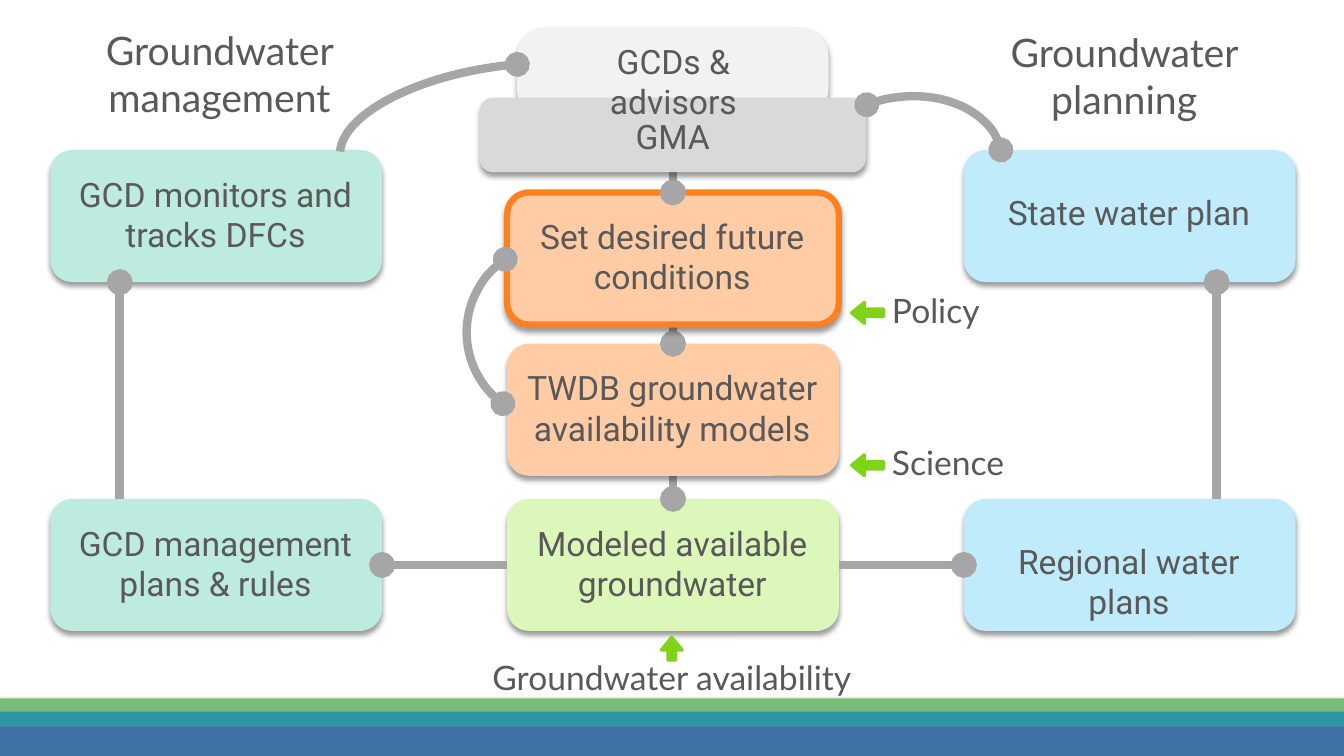
from dataclasses import dataclass

from lxml.etree import SubElement
from pptx import Presentation
from pptx.dml.color import RGBColor
from pptx.enum.shapes import MSO_CONNECTOR, MSO_SHAPE as SHAPE
from pptx.enum.text import MSO_AUTO_SIZE as AUTO_SIZE, PP_ALIGN as ALIGN
from pptx.oxml.ns import qn
from pptx.util import Cm, Pt


@dataclass(frozen=True)
class Theme:
    text: str = "595959"
    link: str = "A6A6A6"
    arrow: str = "81D31A"
    accent: str = "FF8021"
    management: str = "BEEBDF"
    planning: str = "BFEBFA"
    policy: str = "FFCCA6"
    available: str = "DCF7BA"
    advisors: str = "F2F2F2"
    gma: str = "D9D9D9"
    bands: tuple = ("7ABC77", "2F95A5", "3F72A2")
    box_font: str = "Roboto"
    label_font: str = "Lato"
    body: int = 24
    heading: int = 28


# Slide and card measures in centimetres
SLIDE_W, SLIDE_H = 33.87, 19.05
CARD_W, CARD_H = 8.36, 3.33
LEFT, MIDDLE, RIGHT = 1.27, 12.78, 24.29
TOP_ROW, DFC_ROW, MODEL_ROW, BOTTOM_ROW = 3.78, 4.85, 8.66, 12.57
CENTER_X = MIDDLE + CARD_W / 2
LINK_Y = BOTTOM_ROW + CARD_H / 2


class Diagram:
    def __init__(self, slide, theme):
        self.s = slide
        self.t = theme

    def shape(self, kind, box, fill=None, line=None, width=0, adj=()):
        sp = self.s.shapes.add_shape(kind, *map(Cm, box))
        sp.shadow.inherit = False
        for i, value in enumerate(adj):
            sp.adjustments[i] = value
        if fill:
            sp.fill.solid()
            sp.fill.fore_color.rgb = RGBColor.from_string(fill)
        else:
            sp.fill.background()
        if line:
            sp.line.color.rgb = RGBColor.from_string(line)
            sp.line.width = Pt(width)
        else:
            sp.line.fill.background()
        return sp

    def shadow(self, sp, blur=4, dist=3, alpha=40):
        effects = sp._element.spPr.find(qn("a:effectLst"))
        outer = SubElement(effects, qn("a:outerShdw"), blurRad=str(Pt(blur)),
                           dist=str(Pt(dist)), dir="5400000", rotWithShape="0")
        black = SubElement(outer, qn("a:srgbClr"), val="000000")
        SubElement(black, qn("a:alpha"), val=str(alpha * 1000))

    def box(self, box, fill, adj=(), line=None):
        sp = self.shape(SHAPE.ROUNDED_RECTANGLE, box, fill, line, 4.5, adj)
        self.shadow(sp)

    def text(self, text, box, font=None, size=None, align=ALIGN.CENTER):
        tf = self.s.shapes.add_textbox(*map(Cm, box)).text_frame
        tf.word_wrap = True
        tf.auto_size = AUTO_SIZE.SHAPE_TO_FIT_TEXT
        p = tf.paragraphs[0]
        p.text = text
        p.alignment = align
        p.font.name = font or self.t.box_font
        p.font.size = Pt(size or self.t.body)
        p.font.color.rgb = RGBColor.from_string(self.t.text)

    def card(self, text, x, y, fill, line=None, lines=2):
        self.box((x, y, CARD_W, CARD_H), fill, line=line)
        drop, height = (0.47, 2.31) if lines == 2 else (0.94, 1.27)
        self.text(text, (x + 0.17, y + drop, 7.98, height))

    def label(self, text, x, y, w, align=ALIGN.LEFT):
        self.text(text, (x, y, w, 1.27), self.t.label_font, align=align)

    def dots(self, sp, ends):
        ln = sp._element.spPr.find(qn("a:ln"))
        for end in ends:
            SubElement(ln, qn(f"a:{end}End"), type="oval")

    def link(self, x1, y1, x2, y2):
        c = self.s.shapes.add_connector(MSO_CONNECTOR.STRAIGHT,
                                        *map(Cm, (x1, y1, x2, y2)))
        c.line.color.rgb = RGBColor.from_string(self.t.link)
        c.line.width = Pt(6.25)
        self.dots(c, ["tail"])
        SubElement(c._element.spPr, qn("a:effectLst"))

    def flip(self, sp, axes):
        xfrm = sp._element.spPr.find(qn("a:xfrm"))
        for axis in axes:
            xfrm.set(f"flip{axis}", "1")

    def arc(self, box, rotation, axes, ends):
        sp = self.shape(SHAPE.ARC, box, None, self.t.link, 6,
                        (148.81, 214.62))
        sp.rotation = rotation
        self.flip(sp, axes)
        self.dots(sp, ends)

    def arrow(self, box, rotation=0, axes=""):
        sp = self.shape(SHAPE.RIGHT_ARROW, box, self.t.arrow, self.t.arrow,
                        2.25, (0.36, 0.61))
        sp.rotation = rotation
        self.flip(sp, axes)


def main():
    prs = Presentation()
    prs.slide_width, prs.slide_height = Cm(SLIDE_W), Cm(SLIDE_H)
    t = Theme()
    d = Diagram(prs.slides.add_slide(prs.slide_layouts[6]), t)

    # Footer bands
    for i, (y, color) in enumerate(zip((17.6, 17.93, 18.31), t.bands)):
        band = d.shape(SHAPE.RECTANGLE, (0, y, SLIDE_W, SLIDE_H - y), color)
        if i == 0:
            d.shadow(band, 3.1, 1.8, 35)

    # Side cards
    d.card("Regional water plans", RIGHT, BOTTOM_ROW, t.planning, lines=1)
    d.card("State water plan", RIGHT, TOP_ROW, t.planning, lines=1)
    d.card("GCD management plans & rules", LEFT, BOTTOM_ROW, t.management)
    d.card("GCD monitors and tracks DFCs", LEFT, TOP_ROW, t.management)

    # Central column, each card covering the start of the link below it
    d.card("Modeled available groundwater", MIDDLE, BOTTOM_ROW, t.available)
    d.link(CENTER_X, MODEL_ROW + CARD_H, CENTER_X, BOTTOM_ROW)
    d.card("TWDB groundwater availability models", MIDDLE, MODEL_ROW, t.policy)
    d.link(CENTER_X, DFC_ROW + CARD_H, CENTER_X, MODEL_ROW)
    d.card("Set desired future conditions", MIDDLE, DFC_ROW, t.policy, t.accent)
    d.link(CENTER_X, 4.34, CENTER_X, DFC_ROW)
    d.box((13.03, 0.69, 7.85, 2.29), t.advisors, (0.32,))
    d.box((12.09, 2.46, 9.73, 1.88), t.gma, (0.18,))
    d.text("GCDs & advisors", (13.67, 0.91, 6.6, 1.27))
    d.text("GMA", (15.42, 2.79, 3.07, 1.27))

    # Links to and between the side cards
    d.link(MIDDLE, LINK_Y, LEFT + CARD_W, LINK_Y)
    d.link(MIDDLE + CARD_W, LINK_Y, RIGHT, LINK_Y)
    for x in (3.02, 30.66):
        d.link(x, BOTTOM_ROW, x, TOP_ROW + CARD_H)

    # Curved links
    d.arc((8.53, 1.68, 8.18, 3.38), 171.4, "V", ["head"])
    d.arc((20.32, 2.44, 4.95, 3.61), 171.4, "HV", ["head", "tail"])
    d.arc((11.76, 6.15, 4.45, 4.45), 58.1, "HV", ["head", "tail"])

    # Labels with green arrows
    d.label("Policy", 22.23, 7.19, 3.07)
    d.label("Science", 22.23, 11, 3.84)
    d.label("Groundwater availability", 11.66, 16.43, 10.54, ALIGN.CENTER)
    for y in (7.62, 11.46):
        d.arrow((21.46, y, 0.81, 0.53), axes="H")
    d.arrow((16.64, 16.08, 0.58, 0.53), rotation=270)

    # Headings
    for text, x, y in (("Groundwater management", 0.64, 0.53),
                       ("Groundwater planning", 23.44, 0.58)):
        d.text(text, (x, y, 9.78, 2.64), t.label_font, t.heading)

    prs.save("out.pptx")


if __name__ == "__main__":
    main()
